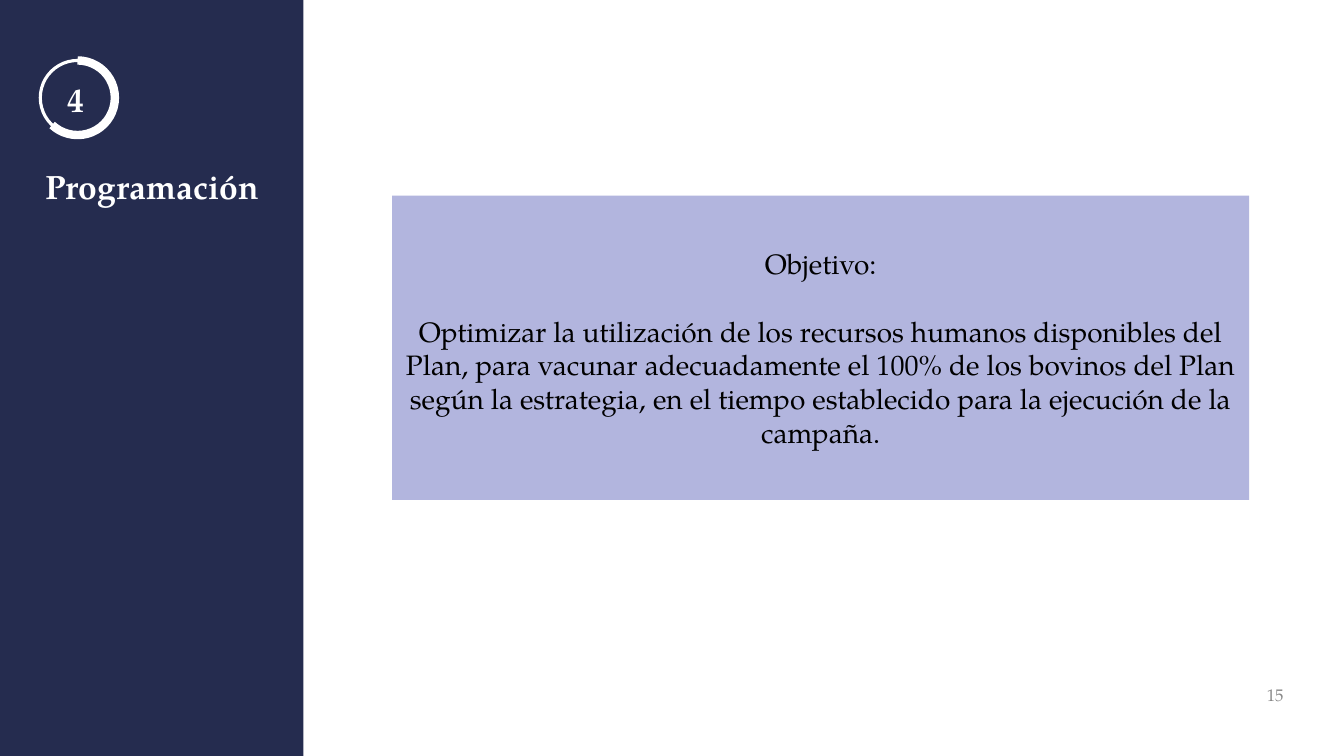
import pptx
import pptx.dml.color
import pptx.enum.shapes
import pptx.enum.text
import pptx.util

PX = 9144  # EMU in one px, 100 px to the inch
SLIDE_SIZE = (1333, 750)
FONT = "TeX Gyre Pagella"
COLORS = {
    "panel": "252C4F",
    "card": "B2B5DE",
    "white": "FFFFFF",
    "text": "000000",
    "number": "888888",
}
SHAPE = pptx.enum.shapes.MSO_SHAPE
ALIGN = pptx.enum.text.PP_ALIGN
ANCHOR = pptx.enum.text.MSO_ANCHOR


def rgb(name):
    return pptx.dml.color.RGBColor.from_string(COLORS[name])


def px(*lengths):
    return [pptx.util.Emu(length * PX) for length in lengths]


def add_shape(slide, kind, box, fill=None, line_width=None):
    """Add a flat shape, filled or outlined in white."""
    shape = slide.shapes.add_shape(kind, *px(*box))
    shape.shadow.inherit = False
    if fill:
        shape.fill.solid()
        shape.fill.fore_color.rgb = rgb(fill)
    else:
        shape.fill.background()
    if line_width:
        shape.line.color.rgb = rgb("white")
        shape.line.width = pptx.util.Pt(line_width)
    else:
        shape.line.fill.background()
    return shape


def write(shape, lines, size, color, bold=False, align=ALIGN.LEFT,
          anchor=ANCHOR.TOP, inset=5, gap=0):
    """Fill a shape with paragraphs that are gap points apart."""
    frame = shape.text_frame
    frame.word_wrap = True
    frame.auto_size = pptx.enum.text.MSO_AUTO_SIZE.NONE
    frame.vertical_anchor = anchor
    frame.margin_left, frame.margin_right = px(10, 10)
    frame.margin_top, frame.margin_bottom = px(inset, inset)
    frame.text = "\n".join(lines)
    for index, paragraph in enumerate(frame.paragraphs):
        paragraph.alignment = align
        paragraph.space_before = pptx.util.Pt(gap if index else 0)
        paragraph.font.name = FONT
        paragraph.font.size = pptx.util.Pt(size)
        paragraph.font.bold = bold
        paragraph.font.color.rgb = rgb(color)


def add_step_badge(slide, left, top, diameter, step):
    """Draw a thin ring, a thick progress arc over it and the step number."""
    ring = (left, top, diameter, diameter)
    add_shape(slide, SHAPE.OVAL, ring, line_width=2.25)
    arc = add_shape(slide, SHAPE.ARC, ring, line_width=6)
    for index, degrees in enumerate((270, 133)):
        arc.adjustments[index] = degrees * 0.6
    label = slide.shapes.add_textbox(*px(left + 17, top + 13, diameter, 52))
    write(label, [step], 24, "white", bold=True)


def add_side_panel(slide, left, top, width, height, step, heading):
    panel = add_shape(slide, SHAPE.RECTANGLE, (left, top, width, height), "panel")
    slide.shapes._spTree.insert(2, panel._element)  # behind the title
    add_step_badge(slide, left + 40, top + 60, 74, step)
    title = slide.shapes.title
    title.left, title.top, title.width, title.height = px(left + 35, top + 155, 257, 105)
    write(title, [heading], 24, "white", bold=True, inset=10)


def add_objective_card(slide, box, lines):
    card = add_shape(slide, SHAPE.RECTANGLE, box, "card")
    write(card, lines, 20, "text", align=ALIGN.CENTER, anchor=ANCHOR.MIDDLE,
          inset=10, gap=24)


def add_slide_number(slide, box, number):
    label = slide.shapes.add_textbox(*px(*box))
    write(label, [number], 12, "number", align=ALIGN.RIGHT, anchor=ANCHOR.MIDDLE)


def main():
    presentation = pptx.Presentation()
    presentation.slide_width, presentation.slide_height = px(*SLIDE_SIZE)
    slide = presentation.slides.add_slide(presentation.slide_layouts[5])
    add_side_panel(slide, 0, 0, 301, SLIDE_SIZE[1], "4", "Programación")
    add_objective_card(slide, (389, 194, 850, 302), [
        "Objetivo:",
        "Optimizar la utilización de los recursos humanos disponibles del Plan, "
        "para vacunar adecuadamente el 100% de los bovinos del Plan según la "
        "estrategia, en el tiempo establecido para la ejecución de la campaña.",
    ])
    add_slide_number(slide, (983, 669, 300, 40), "15")
    presentation.save("out.pptx")


if __name__ == "__main__":
    main()
